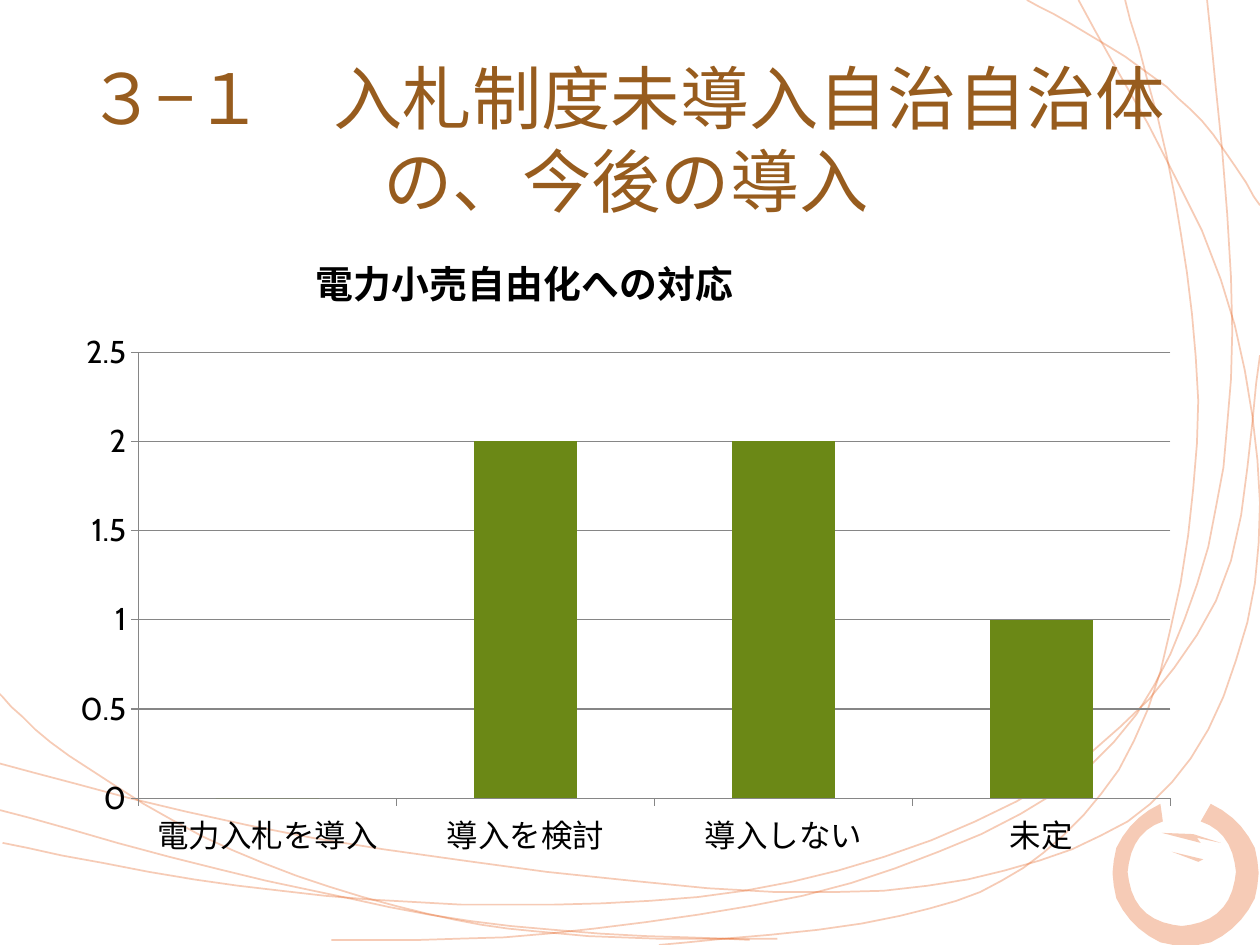
from dataclasses import dataclass
from math import cos, radians, sin

from lxml.etree import SubElement
from pptx import Presentation
from pptx.chart.data import CategoryChartData
from pptx.dml.color import RGBColor
from pptx.enum.chart import XL_CHART_TYPE as ChartType, XL_TICK_MARK as TickMark
from pptx.enum.text import MSO_ANCHOR as Anchor, PP_ALIGN as Align
from pptx.oxml import parse_xml
from pptx.oxml.ns import nsdecls, qn
from pptx.util import Pt

PX = 9144  # EMU per px, 100 px to the inch
ORANGE = RGBColor(0xE3, 0x56, 0x0E)
BROWN = RGBColor(0x97, 0x5C, 0x1E)
GREEN = RGBColor(0x6B, 0x88, 0x16)
GRAY = RGBColor(0x86, 0x86, 0x86)
BLACK = RGBColor(0, 0, 0)

Points = list[tuple[int, int]]


@dataclass(frozen=True)
class Box:
    left: int
    top: int
    width: int
    height: int

    def emu(self) -> tuple[int, int, int, int]:
        return self.left * PX, self.top * PX, self.width * PX, self.height * PX


@dataclass(frozen=True)
class Circle:
    x: int
    y: int
    radius: int

    def at(self, degrees: int) -> tuple[int, int]:
        angle = radians(degrees)
        return (round(self.x + self.radius * cos(angle)),
                round(self.y + self.radius * sin(angle)))


TITLE_BOX = Box(47, 47, 900, 125)
CHART_BOX = Box(47, 177, 900, 513)

# Each strand is a smooth curve through these knots.
STRANDS: list[Points] = [
    [(-3, 548), (55, 600), (185, 675), (338, 725), (467, 743), (617, 745)],
    [(523, 750), (714, 727), (828, 677), (911, 563), (950, 352), (932, 154), (893, 0)],
    [(0, 606), (248, 665), (616, 708), (825, 683), (945, 602), (999, 431),
     (969, 222), (856, 0)],
    [(2, 669), (189, 703), (403, 718), (628, 700), (837, 618), (965, 477), (1000, 282)],
    [(263, 746), (435, 741), (675, 701), (863, 610), (950, 464), (978, 263), (958, 0)],
    [(815, 0), (893, 45), (954, 96), (1000, 163)],
    [(0, 643), (211, 699), (405, 735), (595, 746)],
]
RING_OUTER = Circle(941, 693, 58)
RING_INNER = Circle(938, 692, 43)
RING_START, RING_END, RING_STEP = -70, 250, 10
BRUSH_FLECKS: list[Points] = [
    [(922, 661), (947, 662), (969, 669), (950, 665), (953, 669)],
    [(930, 676), (955, 682), (951, 684)],
]


def smooth_curve(knots: Points, steps: int = 6) -> Points:
    """Catmull-Rom spline through the knots."""
    padded = [knots[0], *knots, knots[-1]]
    curve = [knots[0]]
    for a, b, c, d in zip(padded, padded[1:], padded[2:], padded[3:]):
        for step in range(1, steps + 1):
            t = step / steps
            curve.append(tuple(
                round((2 * q + (r - p) * t + (2 * p - 5 * q + 4 * r - s) * t ** 2
                       + (3 * q - p - 3 * r + s) * t ** 3) / 2)
                for p, q, r, s in zip(a, b, c, d)))
    return curve


def open_ring() -> Points:
    angles = range(RING_START, RING_END + 1, RING_STEP)
    return ([RING_OUTER.at(angle) for angle in angles]
            + [RING_INNER.at(angle) for angle in reversed(angles)])


def draw_outline(page, points: Points, filled: bool) -> None:
    builder = page.shapes.build_freeform(*points[0], scale=PX)
    builder.add_line_segments(points[1:], close=filled)
    shape = builder.convert_to_shape()
    shape.shadow.inherit = False
    if filled:
        shape.line.fill.background()
        paint, opacity = shape.fill, 30
    else:
        shape.fill.background()
        shape.line.width = Pt(1)
        paint, opacity = shape.line.fill, 29
    paint.solid()
    paint.fore_color.rgb = ORANGE
    color = next(shape._element.spPr.iter(qn("a:srgbClr")))
    SubElement(color, qn("a:alpha"), val=str(opacity * 1000))


def draw_title(page, text: str) -> None:
    frame = page.shapes.add_textbox(*TITLE_BOX.emu()).text_frame
    frame.word_wrap = True
    frame.vertical_anchor = Anchor.MIDDLE
    para = frame.paragraphs[0]
    para.text = text
    para.alignment = Align.CENTER
    para.font.name = "Calibri"
    para.font.size = Pt(39.6)
    para.font.color.rgb = BROWN


def layout_xml(inner: bool = False, **fractions: float):
    """Manual chart layout; x, y, w and h are fractions of the chart."""
    target = '<c:layoutTarget val="inner"/>' if inner else ""
    modes = '<c:xMode val="edge"/><c:yMode val="edge"/>'
    sizes = "".join(f'<c:{key} val="{value}"/>' for key, value in fractions.items())
    return parse_xml(f'<c:layout {nsdecls("c")}><c:manualLayout>{target}{modes}{sizes}'
                     "</c:manualLayout></c:layout>")


def set_layout(parent, layout, index: int) -> None:
    for old in parent.findall(qn("c:layout")):
        parent.remove(old)
    parent.insert(index, layout)


def draw_chart(page) -> None:
    name = "電力小売自由化への対応"
    data = CategoryChartData()
    data.categories = ("電力入札を導入", "導入を検討", "導入しない", "未定")
    data.add_series(name, (0, 2, 2, 1))
    chart = page.shapes.add_chart(ChartType.COLUMN_CLUSTERED, *CHART_BOX.emu(), data).chart
    chart.font.name = "Cabin"
    chart.font.size = Pt(18)
    chart.font.color.rgb = BLACK
    chart.has_legend = False

    chart.has_title = True
    heading = chart.chart_title
    heading.text_frame.text = name
    font = heading.text_frame.paragraphs[0].font
    font.name, font.size, font.bold = "Cabin", Pt(21.6), True
    font.color.rgb = BLACK
    heading.include_in_layout = False
    set_layout(heading._element, layout_xml(x=0.22, y=0.03), 1)
    set_layout(chart._chartSpace.chart.plotArea,
               layout_xml(inner=True, x=0.07, y=0.2, w=0.91, h=0.69), 0)

    plot = chart.plots[0]
    plot.gap_width = 150
    plot.vary_by_categories = False
    bars = plot.series[0].format.fill
    bars.solid()
    bars.fore_color.rgb = GREEN

    values = chart.value_axis
    values.minimum_scale, values.maximum_scale, values.major_unit = 0, 2.5, 0.5
    values.has_major_gridlines = True
    for axis in (chart.category_axis, values):
        axis.major_tick_mark = TickMark.OUTSIDE
        axis.format.line.color.rgb = GRAY
    values.major_gridlines.format.line.color.rgb = GRAY


def main() -> None:
    deck = Presentation()
    deck.slide_width, deck.slide_height = 1000 * PX, 750 * PX
    page = deck.slides.add_slide(deck.slide_layouts[6])
    for knots in STRANDS:
        draw_outline(page, smooth_curve(knots), filled=False)
    for points in (open_ring(), *BRUSH_FLECKS):
        draw_outline(page, points, filled=True)
    draw_title(page, "３−１　入札制度未導入自治自治体の、今後の導入")
    draw_chart(page)
    deck.save("out.pptx")


if __name__ == "__main__":
    main()
